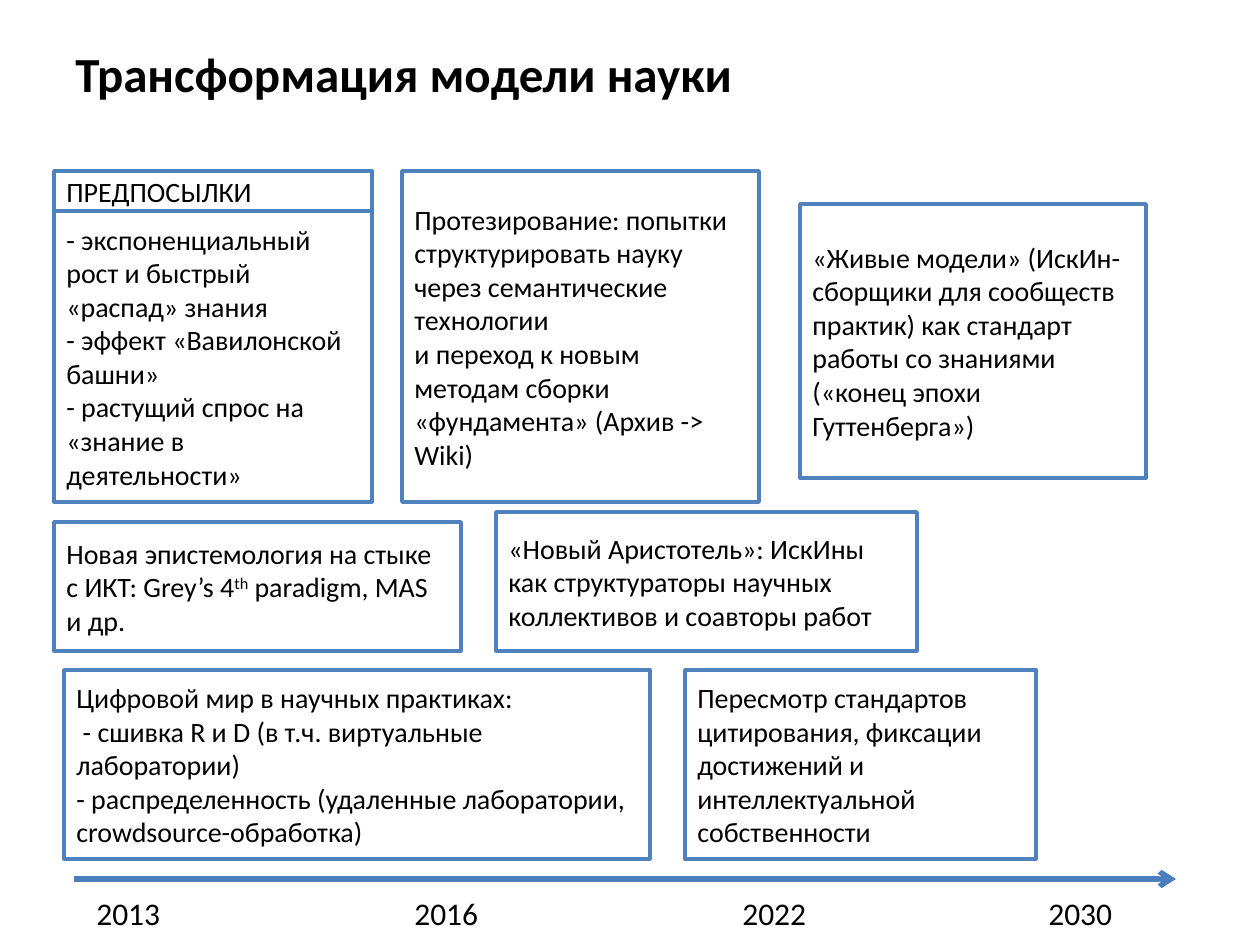
from dataclasses import dataclass

from lxml import etree
from pptx import Presentation
from pptx.dml.color import RGBColor
from pptx.enum.shapes import MSO_CONNECTOR, MSO_SHAPE
from pptx.enum.text import MSO_ANCHOR, MSO_AUTO_SIZE, PP_ALIGN
from pptx.oxml.ns import qn
from pptx.util import Pt

RECTANGLE = MSO_SHAPE.RECTANGLE
STRAIGHT = MSO_CONNECTOR.STRAIGHT
MIDDLE, TOP = MSO_ANCHOR.MIDDLE, MSO_ANCHOR.TOP
FIT_SHAPE = MSO_AUTO_SIZE.SHAPE_TO_FIT_TEXT
LEFT = PP_ALIGN.LEFT

PIXELS_PER_INCH = 126
COLORS = {"text": "000000", "fill": "FFFFFF", "border": "4F81BD", "axis": "4B7EBC"}
TITLE_FORMAT = {"name": "Calibri", "size": Pt(28), "bold": True}
BOX_FORMAT = {"name": "Calibri", "size": Pt(16)}
YEAR_FORMAT = {"name": "Calibri", "size": Pt(18)}


@dataclass(frozen=True)
class Area:
    left: int
    top: int
    width: int
    height: int


@dataclass(frozen=True)
class Stage:
    """A bordered box; ^marks^ raise text and a newline breaks a line."""
    area: Area
    paragraphs: tuple[str, ...]


STAGES = (
    Stage(Area(54, 211, 318, 291), (
        "- экспоненциальный рост и быстрый «распад» знания",
        "- эффект «Вавилонской башни»",
        "- растущий спрос на «знание в деятельности»")),
    Stage(Area(54, 171, 318, 40), ("ПРЕДПОСЫЛКИ",)),
    Stage(Area(54, 522, 407, 129), (
        "Новая эпистемология на стыке с ИКТ: Grey’s 4^th^ paradigm, MAS и др.",)),
    Stage(Area(64, 670, 586, 189), (
        "Цифровой мир в научных практиках:",
        " - сшивка R и D (в т.ч. виртуальные лаборатории)\n"
        "- распределенность (удаленные лаборатории, crowdsource-обработка)")),
    Stage(Area(402, 171, 357, 331), (
        "Протезирование: попытки структурировать науку через семантические технологии",
        "и переход к новым методам сборки «фундамента» (Архив -> Wiki)")),
    Stage(Area(496, 512, 421, 139), (
        "«Новый Аристотель»: ИскИны как структураторы научных коллективов "
        "и соавторы работ",)),
    Stage(Area(800, 204, 346, 274), (
        "«Живые модели» (ИскИн-сборщики для сообществ практик) как стандарт "
        "работы со знаниями («конец эпохи Гуттенберга»)",)),
    Stage(Area(685, 670, 351, 189), (
        "Пересмотр стандартов цитирования, фиксации достижений и "
        "интеллектуальной собственности",)),
)
YEARS = {"2013": 84, "2016": 402, "2022": 730, "2030": 1036}


def px(value: int) -> int:
    return round(value * 914400 / PIXELS_PER_INCH)


def place(area: Area) -> tuple[int, ...]:
    return tuple(px(v) for v in (area.left, area.top, area.width, area.height))


def color(name: str) -> RGBColor:
    return RGBColor.from_string(COLORS[name])


def write_paragraph(paragraph, text: str, format_values: dict) -> None:
    paragraph.alignment = LEFT
    for line_number, line in enumerate(text.split("\n")):
        if line_number:
            paragraph.add_line_break()
        for part_number, part in enumerate(line.split("^")):
            span = paragraph.add_run()
            span.text = part
            for name, value in format_values.items():
                setattr(span.font, name, value)
            span.font.color.rgb = color("text")
            if part_number % 2:
                span.font._element.set("baseline", "30000")


def write_paragraphs(frame, paragraphs: tuple[str, ...], format_values: dict) -> None:
    for number, text in enumerate(paragraphs):
        paragraph = frame.add_paragraph() if number else frame.paragraphs[0]
        write_paragraph(paragraph, text, format_values)


def draw_label(page, area: Area, text: str, format_values: dict, anchor) -> None:
    frame = page.shapes.add_textbox(*place(area)).text_frame
    frame.word_wrap = False
    frame.auto_size = FIT_SHAPE
    frame.vertical_anchor = anchor
    write_paragraphs(frame, (text,), format_values)


def draw_stage(page, stage: Stage) -> None:
    box = page.shapes.add_shape(RECTANGLE, *place(stage.area))
    box.shadow.inherit = False
    box.fill.solid()
    box.fill.fore_color.rgb = color("fill")
    box.line.color.rgb = color("border")
    box.line.width = Pt(2)
    box.text_frame.word_wrap = True
    box.text_frame.vertical_anchor = MIDDLE
    write_paragraphs(box.text_frame, stage.paragraphs, BOX_FORMAT)


def draw_axis(page, start: int, end: int, top: int) -> None:
    axis = page.shapes.add_connector(STRAIGHT, px(start), px(top), px(end), px(top))
    axis.line.color.rgb = color("axis")
    axis.line.width = Pt(3)
    etree.SubElement(axis.line._get_or_add_ln(), qn("a:tailEnd"), type="arrow")
    etree.SubElement(axis._element.spPr, qn("a:effectLst"))


def main() -> None:
    deck = Presentation()
    deck.slide_width, deck.slide_height = px(1260), px(945)
    page = deck.slides.add_slide(deck.slide_layouts[6])

    # Title
    draw_label(page, Area(63, 37, 688, 72), "Трансформация модели науки",
               TITLE_FORMAT, MIDDLE)

    # Stages of the change
    for stage in STAGES:
        draw_stage(page, stage)

    # Time axis
    draw_axis(page, 74, 1176, 879)
    for year, left in YEARS.items():
        draw_label(page, Area(left, 888, 89, 50), year, YEAR_FORMAT, TOP)

    deck.save("out.pptx")


if __name__ == "__main__":
    main()
